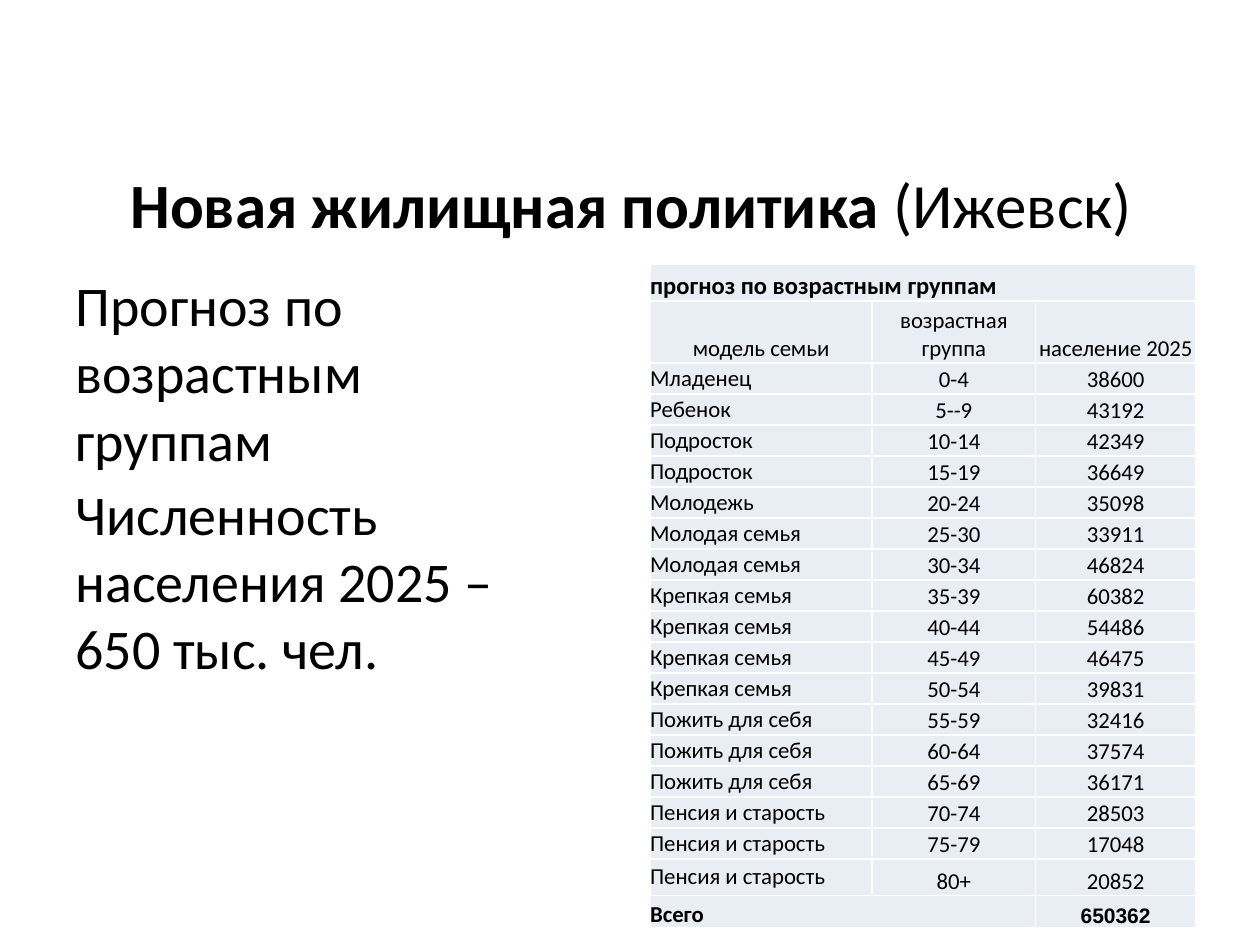
from lxml import etree
from pptx import Presentation
from pptx.dml.color import RGBColor
from pptx.enum.text import MSO_ANCHOR, PP_ALIGN
from pptx.oxml.ns import qn
from pptx.util import Inches, Pt

LEFT, CENTER = PP_ALIGN.LEFT, PP_ALIGN.CENTER
TOP, MIDDLE, BOTTOM = MSO_ANCHOR.TOP, MSO_ANCHOR.MIDDLE, MSO_ANCHOR.BOTTOM

HEADS = ("модель семьи", "возрастная группа", "население 2025")
GROUPS = [
    ("Младенец", "0-4", "38600"),
    ("Ребенок", "5--9", "43192"),
    ("Подросток", "10-14", "42349"),
    ("Подросток", "15-19", "36649"),
    ("Молодежь", "20-24", "35098"),
    ("Молодая семья", "25-30", "33911"),
    ("Молодая семья", "30-34", "46824"),
    ("Крепкая семья", "35-39", "60382"),
    ("Крепкая семья", "40-44", "54486"),
    ("Крепкая семья", "45-49", "46475"),
    ("Крепкая семья", "50-54", "39831"),
    ("Пожить для себя", "55-59", "32416"),
    ("Пожить для себя", "60-64", "37574"),
    ("Пожить для себя", "65-69", "36171"),
    ("Пенсия и старость", "70-74", "28503"),
    ("Пенсия и старость", "75-79", "17048"),
    ("Пенсия и старость", "80+", "20852"),
]


def color(code):
    return RGBColor.from_string(code)


class Deck:
    ink, pale, line = "000000", "E9EDF4", "FFFFFF"
    face = "Calibri"

    def __init__(self, slide):
        self.slide = slide

    def style(self, run, size, bold=False, face=None):
        font = run.font
        font.name, font.size, font.bold = face or self.face, Pt(size), bold
        font.color.rgb = color(self.ink)

    def text(self, box, paras, size, align=LEFT, anchor=TOP, gap=0):
        """Add a text box; each paragraph is a list of (text, bold) runs."""
        frame = self.slide.shapes.add_textbox(*map(Inches, box)).text_frame
        frame.word_wrap, frame.vertical_anchor = True, anchor
        for i, parts in enumerate(paras):
            para = frame.add_paragraph() if i else frame.paragraphs[0]
            para.alignment = align
            if i:
                para.space_before = Pt(gap)
            for words, bold in parts:
                run = para.add_run()
                run.text = words
                self.style(run, size, bold)

    def table(self, box, widths, heights):
        shape = self.slide.shapes.add_table(
            len(heights), len(widths), *map(Inches, box))
        grid = shape.table
        grid.first_row = grid.horz_banding = False
        for col, width in zip(grid.columns, widths):
            col.width = Inches(width)
        for row, height in zip(grid.rows, heights):
            row.height = Inches(height)
        for cell in grid.iter_cells():
            cell.margin_left = cell.margin_right = 0
            cell.margin_top = cell.margin_bottom = 0
            self.border(cell)
            cell.fill.solid()
            cell.fill.fore_color.rgb = color(self.pale)
        return grid

    def border(self, cell):
        props = cell._tc.get_or_add_tcPr()
        for side in ("a:lnL", "a:lnR", "a:lnT", "a:lnB"):
            edge = etree.SubElement(props, qn(side), w=str(Pt(1)))
            fill = etree.SubElement(edge, qn("a:solidFill"))
            etree.SubElement(fill, qn("a:srgbClr"), val=self.line)

    def cell(self, cell, words, size=13, bold=False, align=CENTER,
             anchor=BOTTOM, face=None):
        cell.text_frame.text = words
        cell.vertical_anchor = anchor
        para = cell.text_frame.paragraphs[0]
        para.alignment = align
        self.style(para.runs[0], size, bold, face)


def main():
    prs = Presentation()
    prs.slide_width, prs.slide_height = Inches(10), Inches(7.5)
    deck = Deck(prs.slides.add_slide(prs.slide_layouts[6]))

    deck.text((0.51, 0.99, 9, 1.25),
              [[("Новая жилищная политика ", True), ("(Ижевск)", False)]],
              36, CENTER, MIDDLE)
    deck.text((0.5, 2.1, 4.03, 4.6),
              [[("Прогноз по возрастным группам", False)],
               [("Численность населения 2025 – 650 тыс. чел.", False)]],
              32, gap=4)

    high = 5.27
    first, last = [0.29, 0.49], [0.29, 0.26]
    count = len(GROUPS) - 1
    step = (high - sum(first + last)) / count
    grid = deck.table((5.16, 2.1, 4.32, high), (1.76, 1.3, 1.27),
                      first + [step] * count + last)

    grid.cell(0, 0).merge(grid.cell(0, 2))
    deck.cell(grid.cell(0, 0), "прогноз по возрастным группам",
              14, True, LEFT)
    for col, head in enumerate(HEADS):
        deck.cell(grid.cell(1, col), head)
    for row, (model, age, people) in enumerate(GROUPS, 2):
        deck.cell(grid.cell(row, 0), model, align=LEFT, anchor=MIDDLE)
        deck.cell(grid.cell(row, 1), age)
        deck.cell(grid.cell(row, 2), people)
    total = len(GROUPS) + 2
    grid.cell(total, 0).merge(grid.cell(total, 1))
    deck.cell(grid.cell(total, 0), "Всего", bold=True, align=LEFT)
    deck.cell(grid.cell(total, 2), "650362", 12, True, face="Arial")

    prs.save("out.pptx")


if __name__ == "__main__":
    main()
